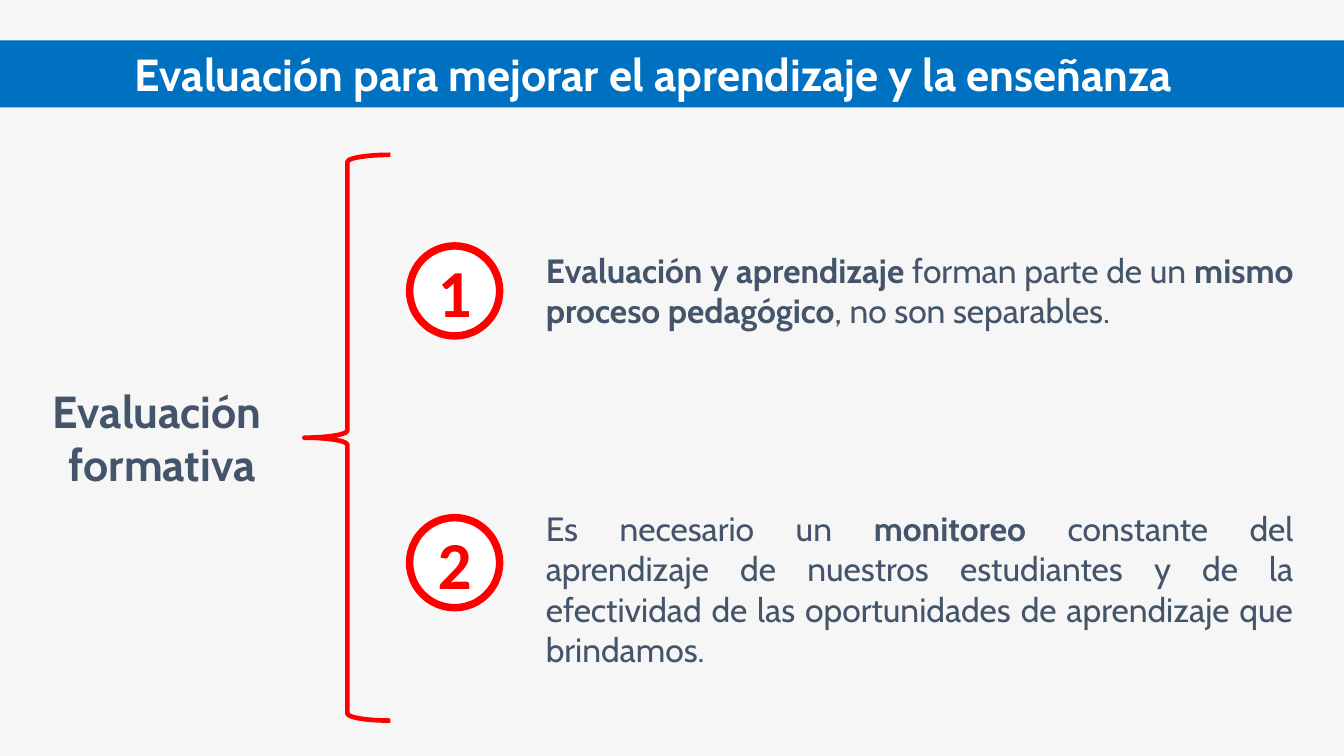
"""Build a slide that sets out two ideas behind formative assessment."""
from dataclasses import dataclass

from pptx import Presentation
from pptx import util as u
from pptx.dml.color import RGBColor
from pptx.enum import shapes, text


@dataclass(frozen=True)
class Theme:
    background: str = "F6F6F6"
    banner: str = "0070C0"
    accent: str = "FF0000"
    ink: str = "44546A"
    white: str = "FFFFFF"
    font: str = "Cabin"
    number_font: str = "Calibri"
    heading: int = 24
    body: int = 18
    number: int = 36
    brace_line: float = 2.5
    circle_line: float = 4


THEME = Theme()
WIDTH = 10
HEIGHT = WIDTH * 9 / 16

TITLE = [[("Evaluación para mejorar el aprendizaje y la enseñanza", True)]]
TOPIC = [[("Evaluación ", True)], [("formativa", True)]]
IDEAS = [
    {"top": 32.18, "height": 12.62, "inset": 0.89, "runs": [
        ("Evaluación y aprendizaje", True),
        (" forman parte de un ", False),
        ("mismo proceso pedagógico", True),
        (", no son separables.", False)]},
    {"top": 60.09, "height": 29.87, "inset": 7.11, "runs": [
        ("Es necesario un ", False),
        ("monitoreo", True),
        (" constante del aprendizaje de nuestros estudiantes y de la efectividad "
         "de las oportunidades de aprendizaje que brindamos. ", False)]},
]

BANNER = (0, 5.33, 100, 8.89)
BRACE = (22.65, 20.48, 6.4, 74.84)
TOPIC_AREA = (1.55, 49.85, 21, 16.18)
IDEA_LEFT, IDEA_WIDTH = 39.63, 57.6
CIRCLE_LEFT, CIRCLE_WIDTH = 30.48, 6.7
CIRCLE_TOP, CIRCLE_STEP = 32.53, 35.95


def place(left, top, width, height):
    """Turn percentages of the slide into lengths."""
    return [u.Inches(share * side / 100) for share, side in
            zip((left, top, width, height), (WIDTH, HEIGHT) * 2)]


def color(value):
    return RGBColor.from_string(value)


def add_shape(slide, kind, area, fill=None, line=None, weight=0):
    shape = slide.shapes.add_shape(kind, *place(*area))
    shape.shadow.inherit = False
    if fill:
        shape.fill.solid()
        shape.fill.fore_color.rgb = color(fill)
    else:
        shape.fill.background()
    if line:
        shape.line.color.rgb = color(line)
        shape.line.width = u.Pt(weight)
    else:
        shape.line.fill.background()
    return shape


def write(shape, paragraphs, size, ink, alignment,
          font=THEME.font, anchor=text.MSO_ANCHOR.TOP):
    frame = shape.text_frame
    frame.word_wrap = True
    frame.vertical_anchor = anchor
    for index, runs in enumerate(paragraphs):
        paragraph = frame.add_paragraph() if index else frame.paragraphs[0]
        paragraph.alignment = alignment
        for words, bold in runs:
            run = paragraph.add_run()
            run.text = words
            run.font.name = font
            run.font.size = u.Pt(size)
            run.font.bold = bold
            run.font.color.rgb = color(ink)


def add_text(slide, area, paragraphs, size, alignment):
    box = slide.shapes.add_textbox(*place(*area))
    write(box, paragraphs, size, THEME.ink, alignment)
    return box


def add_idea(slide, index, idea):
    box = add_text(slide, (IDEA_LEFT, idea["top"], IDEA_WIDTH, idea["height"]),
                   [idea["runs"]], THEME.body, text.PP_ALIGN.JUSTIFY)
    box.text_frame.margin_top = u.Inches(idea["inset"] * HEIGHT / 100)
    area = (CIRCLE_LEFT, CIRCLE_TOP + index * CIRCLE_STEP,
            CIRCLE_WIDTH, CIRCLE_WIDTH * WIDTH / HEIGHT)
    circle = add_shape(slide, shapes.MSO_SHAPE.OVAL, area,
                       THEME.white, THEME.accent, THEME.circle_line)
    write(circle, [[(str(index + 1), True)]], THEME.number, THEME.accent,
          text.PP_ALIGN.CENTER, THEME.number_font, text.MSO_ANCHOR.MIDDLE)


def main():
    presentation = Presentation()
    presentation.slide_width = u.Inches(WIDTH)
    presentation.slide_height = u.Inches(HEIGHT)
    slide = presentation.slides.add_slide(presentation.slide_layouts[6])
    slide.background.fill.solid()
    slide.background.fill.fore_color.rgb = color(THEME.background)

    add_shape(slide, shapes.MSO_SHAPE.LEFT_BRACE, BRACE,
              line=THEME.accent, weight=THEME.brace_line)
    add_text(slide, TOPIC_AREA, TOPIC, THEME.heading, text.PP_ALIGN.CENTER)
    banner = add_shape(slide, shapes.MSO_SHAPE.RECTANGLE, BANNER, THEME.banner)
    write(banner, TITLE, THEME.heading, THEME.white, text.PP_ALIGN.LEFT)
    banner.text_frame.margin_left = u.Inches(WIDTH / 10)
    for index, idea in enumerate(IDEAS):
        add_idea(slide, index, idea)
    presentation.save("out.pptx")


if __name__ == "__main__":
    main()
